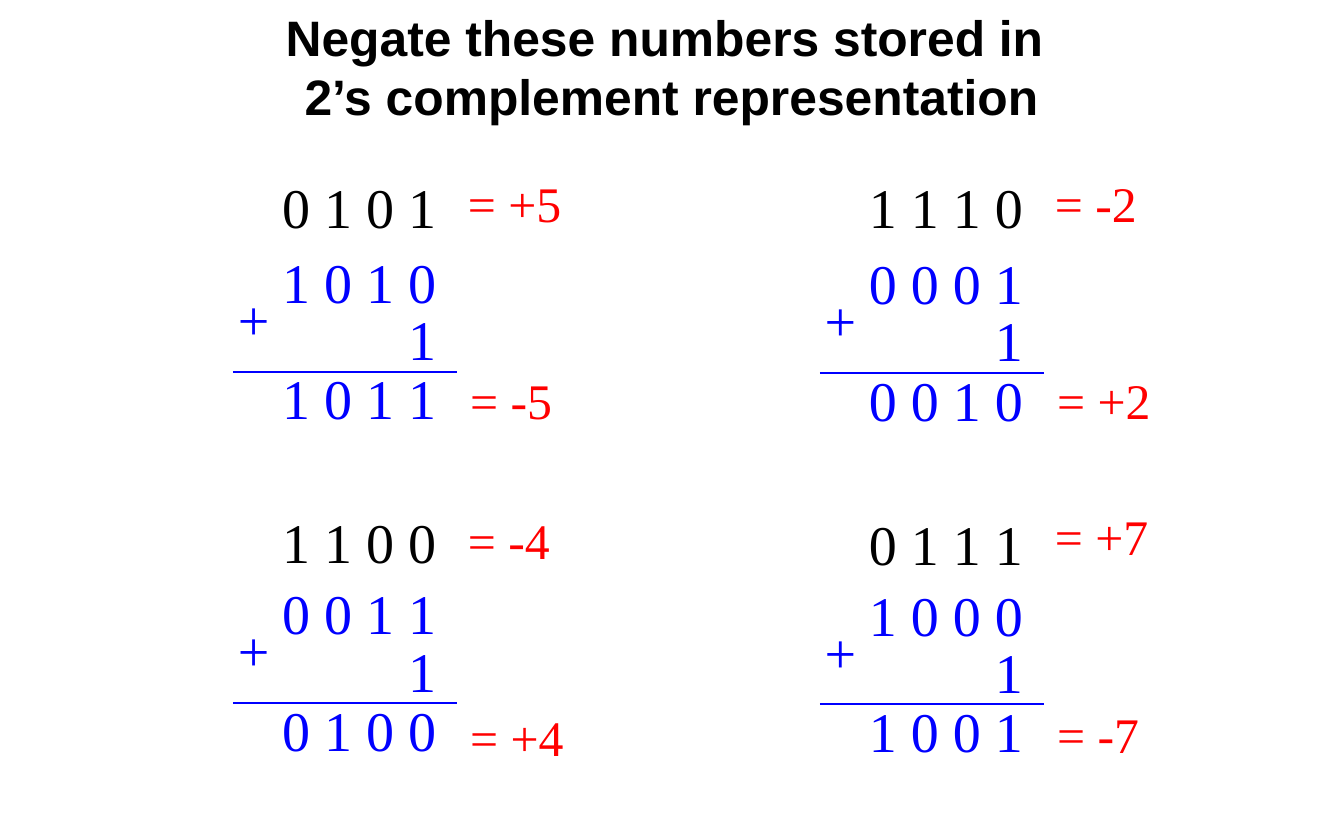
from dataclasses import dataclass
from pptx import Presentation
from pptx.dml.color import RGBColor
from pptx.enum.shapes import MSO_CONNECTOR as Connector
from pptx.enum.text import MSO_ANCHOR as Anchor, MSO_AUTO_SIZE as AutoSize, PP_ALIGN as Align
from pptx.oxml.ns import qn
from pptx.util import Pt
from lxml.etree import SubElement

SCALE = 9144
BLACK = RGBColor(0, 0, 0)
BLUE = RGBColor(0, 0, 255)
RED = RGBColor(255, 0, 0)


def emu(*lengths):
    return [length * SCALE for length in lengths]


@dataclass
class SlideBuilder:
    slide: object
    title_font: str = "Arial"
    number_font: str = "Times New Roman"
    title_size: int = 32
    bits_size: int = 36
    value_size: int = 32

    def style(self, text_frame, font, size, color, bold=False):
        for paragraph in text_frame.paragraphs:
            for run in paragraph.runs:
                run.font.name = font
                run.font.size = Pt(size)
                run.font.bold = bold
                run.font.color.rgb = color

    def title(self, text, left, top, width, height):
        shape = self.slide.shapes.add_textbox(*emu(left, top, width, height))
        text_frame = shape.text_frame
        text_frame.word_wrap = True
        text_frame.vertical_anchor = Anchor.MIDDLE
        text_frame.text = text
        for paragraph in text_frame.paragraphs:
            paragraph.alignment = Align.CENTER
        self.style(text_frame, self.title_font, self.title_size, BLACK, True)

    def label(self, shapes, text, left, top, width, height, size, color):
        shape = shapes.add_textbox(*emu(left, top, width, height))
        text_frame = shape.text_frame
        text_frame.word_wrap = False
        text_frame.auto_size = AutoSize.SHAPE_TO_FIT_TEXT
        text_frame.text = text
        self.style(text_frame, self.number_font, size, color)

    def bits(self, shapes, text, left, top, color, width=159):
        self.label(shapes, text, left, top, width, 71, self.bits_size, color)

    def value(self, text, left, top):
        width = 104 if "+" in text else 94
        self.label(self.slide.shapes, text, left, top, width, 64, self.value_size, RED)

    def rule(self, shapes, left, top, length):
        line = shapes.add_connector(Connector.STRAIGHT, *emu(left, top, left + length, top))
        line.line.color.rgb = BLUE
        line.line.width = Pt(1.25)
        SubElement(line._element.spPr, qn("a:effectLst"))

    def addition(self, inverted, result, left, top):
        shapes = self.slide.shapes.add_group_shape().shapes
        self.bits(shapes, inverted, left, top, BLUE)
        self.bits(shapes, " 1", left + 100, top + 51, BLUE, 58)
        self.bits(shapes, result, left, top + 104, BLUE)
        self.bits(shapes, " +", left - 52, top + 33, BLUE, 61)
        self.rule(shapes, left - 34, top + 116, 200)


LEFT, RIGHT = 242, 766
PROBLEMS = [
    (LEFT, 149, 216, 149, "0 1 0 1", "1 0 1 0", "1 0 1 1", "= +5", "= -5"),
    (RIGHT, 149, 217, 149, "1 1 1 0", "0 0 0 1", "0 0 1 0", "= -2", "= +2"),
    (LEFT, 448, 512, 450, "1 1 0 0", "0 0 1 1", "0 1 0 0", "= -4", "= +4"),
    (RIGHT, 450, 513, 447, "0 1 1 1", "1 0 0 0", "1 0 0 1", "= +7", "= -7"),
]


def main():
    presentation = Presentation()
    presentation.slide_width, presentation.slide_height = emu(1200, 750)
    builder = SlideBuilder(presentation.slides.add_slide(presentation.slide_layouts[6]))
    builder.title("Negate these numbers stored in \n2’s complement representation", 100, 1, 1000, 116)
    for left, number_top, sum_top, value_top, number, inverted, result, before, after in PROBLEMS:
        builder.bits(builder.slide.shapes, number, left, number_top, BLACK)
        builder.addition(inverted, result, left, sum_top)
        builder.value(before, left + 166, value_top)
        builder.value(after, left + 168, value_top + 176)
    presentation.save("out.pptx")


if __name__ == "__main__":
    main()
